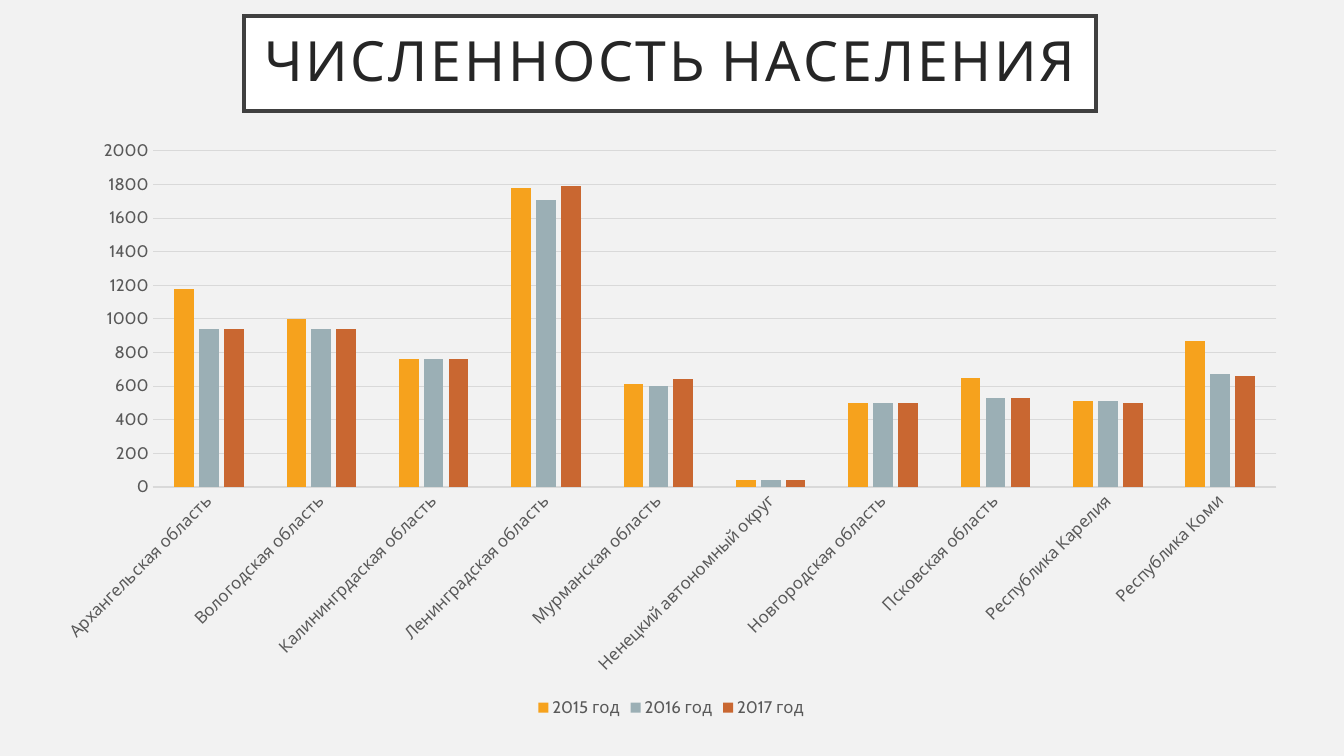
"""Build a slide that compares regional population over three years."""
from dataclasses import dataclass

from lxml.etree import SubElement
from pptx import Presentation
from pptx.chart.data import CategoryChartData
from pptx.dml.color import RGBColor
from pptx.enum.chart import XL_CHART_TYPE as ChartType
from pptx.enum.chart import XL_LEGEND_POSITION as LegendPosition
from pptx.enum.chart import XL_TICK_MARK as TickMark
from pptx.enum.text import MSO_ANCHOR as Anchor
from pptx.enum.text import MSO_AUTO_SIZE as AutoSize
from pptx.enum.text import PP_ALIGN as Align
from pptx.oxml.ns import qn
from pptx.util import Inches, Pt


@dataclass(frozen=True)
class Theme:
    font: str = "Cabin"
    background: str = "F2F2F2"
    title_fill: str = "FFFFFF"
    title_line: str = "404040"
    title_text: str = "262626"
    label: str = "595959"
    grid: str = "D9D9D9"
    title_size: float = 39.6
    space_size: float = 32.4
    label_size: float = 12


@dataclass(frozen=True)
class Box:
    left: float
    top: float
    width: float
    height: float

    def place(self) -> tuple[int, int, int, int]:
        return (
            Inches(self.left * SLIDE_WIDTH),
            Inches(self.top * SLIDE_HEIGHT),
            Inches(self.width * SLIDE_WIDTH),
            Inches(self.height * SLIDE_HEIGHT),
        )


@dataclass(frozen=True)
class YearSeries:
    name: str
    values: tuple[int, ...]
    color: str


THEME = Theme()
SLIDE_WIDTH, SLIDE_HEIGHT = 13.33, 7.5
TITLE_BOX = Box(2.42 / SLIDE_WIDTH, 0.16 / SLIDE_HEIGHT, 8.45 / SLIDE_WIDTH, 0.94 / SLIDE_HEIGHT)
CHART_BOX = Box(0.4 / SLIDE_WIDTH, 1.28 / SLIDE_HEIGHT, 12.51 / SLIDE_WIDTH, 5.88 / SLIDE_HEIGHT)
REGIONS = (
    "Архангельская область",
    "Вологодская область",
    "Калинингрдаская область",
    "Ленинградская область",
    "Мурманская область",
    "Ненецкий автономный округ",
    "Новгородская область",
    "Псковская область",
    "Республика Карелия",
    "Республика Коми",
)
YEARS = (
    YearSeries("2015 год", (1180, 1000, 760, 1780, 610, 40, 500, 650, 510, 870), "F6A21D"),
    YearSeries("2016 год", (940, 940, 760, 1710, 600, 40, 500, 530, 510, 670), "9BAFB5"),
    YearSeries("2017 год", (940, 940, 760, 1790, 640, 40, 500, 530, 500, 660), "C96731"),
)


def rgb(value: str) -> RGBColor:
    return RGBColor.from_string(value)


def style_font(font, size: float, color: str) -> None:
    font.name = THEME.font
    font.size = Pt(size)
    font.bold = False
    font.color.rgb = rgb(color)


def style_line(line, color: str, width: float) -> None:
    line.color.rgb = rgb(color)
    line.width = Pt(width)


def add_title(slide) -> None:
    title = slide.shapes.title
    title.left, title.top, title.width, title.height = TITLE_BOX.place()
    title.fill.solid()
    title.fill.fore_color.rgb = rgb(THEME.title_fill)
    style_line(title.line, THEME.title_line, 2.5)
    outline = title._element.spPr.find(qn("a:ln"))
    SubElement(outline, qn("a:miter")).set("lim", "800000")
    frame = title.text_frame
    frame.word_wrap = True
    frame.auto_size = AutoSize.NONE
    frame.vertical_anchor = Anchor.MIDDLE
    frame.margin_left = frame.margin_right = Inches(0.05)
    frame.margin_top = frame.margin_bottom = Inches(0.05)
    paragraph = frame.paragraphs[0]
    paragraph.alignment = Align.CENTER
    paragraph.line_spacing = 0.9
    for text, size in (
        ("ЧИСЛЕННОСТЬ", THEME.title_size),
        (" ", THEME.space_size),
        ("НАСЕЛЕНИЯ", THEME.title_size),
    ):
        run = paragraph.add_run()
        run.text = text
        style_font(run.font, size, THEME.title_text)
        run.font._element.set("spc", "200")


def style_axis(axis) -> None:
    axis.major_tick_mark = axis.minor_tick_mark = TickMark.NONE
    style_font(axis.tick_labels.font, THEME.label_size, THEME.label)


def add_population_chart(slide) -> None:
    data = CategoryChartData(number_format="General")
    data.categories = REGIONS
    for year in YEARS:
        data.add_series(year.name, year.values)
    chart = slide.shapes.add_chart(ChartType.COLUMN_CLUSTERED, *CHART_BOX.place(), data).chart
    chart.has_title = False
    style_font(chart.font, THEME.label_size, THEME.label)

    chart.has_legend = True
    chart.legend.position = LegendPosition.BOTTOM
    chart.legend.include_in_layout = False
    style_font(chart.legend.font, THEME.label_size, THEME.label)

    plot = chart.plots[0]
    plot.gap_width = 219
    plot.overlap = -27
    plot.vary_by_categories = False
    for series, year in zip(plot.series, YEARS):
        series.format.fill.solid()
        series.format.fill.fore_color.rgb = rgb(year.color)

    style_axis(chart.category_axis)
    style_line(chart.category_axis.format.line, THEME.grid, 0.75)
    label_body = chart.category_axis._element.txPr.bodyPr
    label_body.set("rot", "-2700000")
    label_body.set("vert", "horz")

    value_axis = chart.value_axis
    style_axis(value_axis)
    value_axis.minimum_scale, value_axis.maximum_scale = 0, 2000
    value_axis.major_unit = 200
    value_axis.format.line.fill.background()
    style_line(value_axis.major_gridlines.format.line, THEME.grid, 0.75)


def main() -> None:
    presentation = Presentation()
    presentation.slide_width = Inches(SLIDE_WIDTH)
    presentation.slide_height = Inches(SLIDE_HEIGHT)
    slide = presentation.slides.add_slide(presentation.slide_layouts[5])
    slide.background.fill.solid()
    slide.background.fill.fore_color.rgb = rgb(THEME.background)
    add_title(slide)
    add_population_chart(slide)
    presentation.save("out.pptx")


if __name__ == "__main__":
    main()
